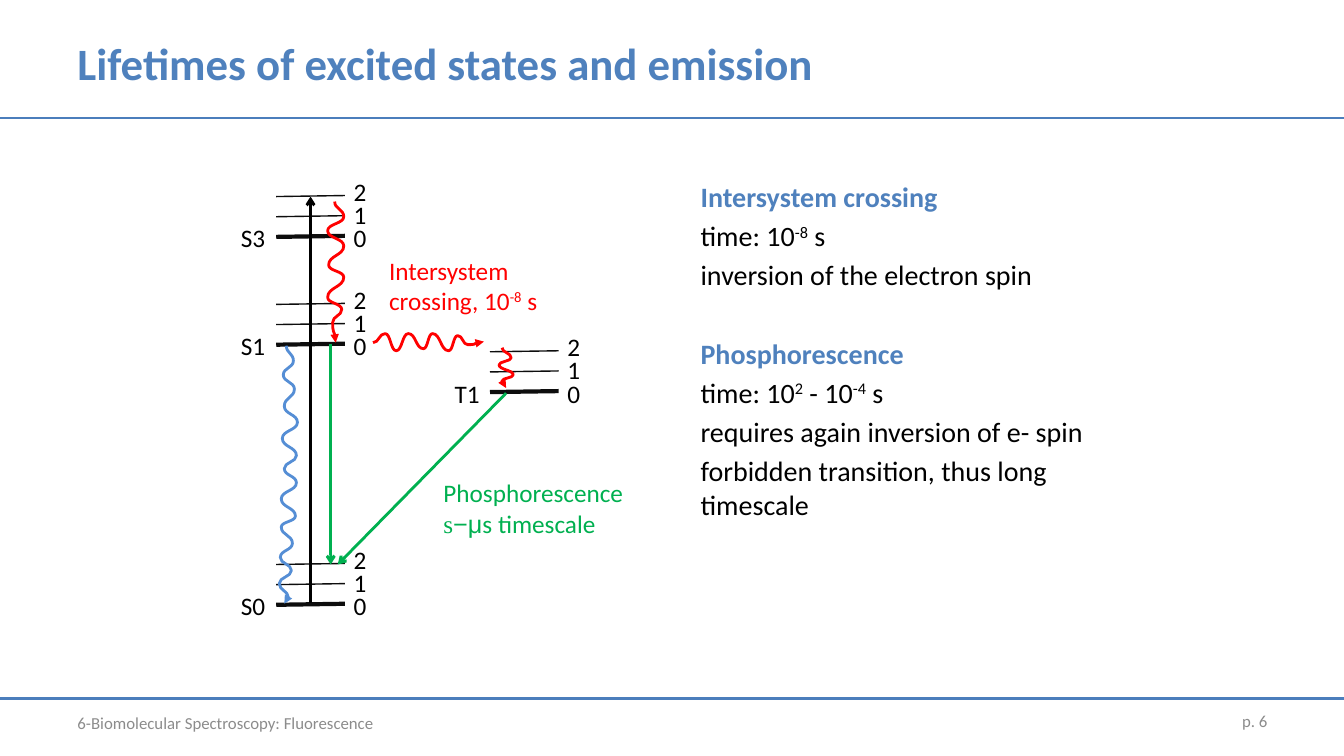
"""Build a slide on excited-state lifetimes with an energy-level diagram."""
from lxml import etree
from pptx import Presentation
from pptx import util as u
from pptx.dml.color import RGBColor
from pptx.enum import shapes, text
from pptx.oxml.ns import qn

TITLE_BLUE = RGBColor(0x4F, 0x81, 0xBD)
RULE_BLUE = RGBColor(0x4B, 0x7E, 0xBC)
WAVE_BLUE = RGBColor(0x55, 0x8E, 0xD5)
GREY = RGBColor(0x8C, 0x8C, 0x8C)
BLACK = RGBColor(0, 0, 0)
LEVEL_BLACK = RGBColor(0x0D, 0x0D, 0x0D)
RED = RGBColor(0xFF, 0, 0)
GREEN = RGBColor(0, 0xB0, 0x50)

SLIDE_WIDTH, SLIDE_HEIGHT = 13.33, 7.5
RULES = [6.93, 1.17]
TITLE = "Lifetimes of excited states and emission"
FOOTER = "6-Biomolecular Spectroscopy: Fluorescence"
PAGE = "p. 6"

# Each paragraph is a list of runs; a caret marks a superscript run.
PROCESSES = [
    ("Intersystem crossing", [
        ["time: 10", "^-8", " s"],
        ["inversion of the electron spin"]]),
    ("Phosphorescence", [
        ["time: 10", "^2", " - 10", "^-4", " s"],
        ["requires again inversion of e- spin"],
        ["forbidden transition, thus long timescale"]]),
]
CROSSING_LABEL = [["Intersystem crossing, 10", "^-8", " s"]]
PHOSPHORESCENCE_LABEL = [["Phosphorescence"], ["s", "−μ", "s timescale"]]
LABEL_FONTS = {"s": "Times New Roman", "−μ": "Arial"}

STATES = [("S0", 2.74, 6.0), ("S1", 2.74, 3.42), ("T1", 4.86, 3.89), ("S3", 2.74, 2.35)]
LEVEL_WIDTH, LEVEL_GAP, LEVEL_TILT = 0.68, 0.2, 0.01
NUMBER_RISE = 0.23

TRANSITIONS = [
    ((3.08, 5.98), (3.08, 1.95), BLACK),
    ((3.28, 3.41), (3.28, 5.6), GREEN),
    ((5.02, 3.9), (3.35, 5.6), GREEN),
]
RELAXATIONS = [
    (RED, True, [(3.32, 2), (3.41, 2.15), (3.25, 2.29), (3.41, 2.44), (3.26, 2.63),
                 (3.41, 2.75), (3.25, 2.95), (3.39, 3.07), (3.3, 3.2), (3.33, 3.4)]),
    (WAVE_BLUE, True, [(2.84, 3.43), (2.91, 3.58), (2.81, 3.72), (2.92, 3.86), (2.82, 4.03),
                       (2.95, 4.19), (2.8, 4.35), (2.94, 4.52), (2.82, 4.65), (2.94, 4.79),
                       (2.79, 4.95), (2.93, 5.12), (2.79, 5.23), (2.9, 5.39), (2.78, 5.53),
                       (2.89, 5.66), (2.77, 5.79), (2.86, 5.93), (2.82, 5.99)]),
    (RED, False, [(3.7, 3.4), (3.82, 3.31), (3.93, 3.48), (4.05, 3.31), (4.2, 3.46),
                  (4.29, 3.31), (4.45, 3.48), (4.54, 3.33), (4.64, 3.42), (4.8, 3.39)]),
    (RED, True, [(4.98, 3.45), (5.07, 3.55), (4.95, 3.62), (5.09, 3.72), (4.98, 3.78),
                 (5.02, 3.85)]),
]


def style_line(shape, color, width, head=None):
    shape.line.color.rgb = color
    shape.line.width = u.Pt(width)
    if head:
        outline = shape.line._get_or_add_ln()
        etree.SubElement(outline, qn("a:tailEnd"), type=head)


def add_line(slide, start, end, color, width, head=None):
    line = slide.shapes.add_connector(
        shapes.MSO_CONNECTOR.STRAIGHT, *(u.Inches(v) for v in (*start, *end)))
    style_line(line, color, width, head)
    etree.SubElement(line._element.spPr, qn("a:effectLst"))


def add_wave(slide, color, vertical, turns):
    """Join the turning points by curves that run along the wave's direction."""
    builder = slide.shapes.build_freeform(*turns[0], scale=u.Inches(1) / 1.0)
    builder = slide.shapes.build_freeform(
        *(u.Inches(v) for v in turns[0]))
    builder.add_line_segments([(u.Inches(x), u.Inches(y)) for x, y in turns[1:]], close=False)
    wave = builder.convert_to_shape()
    wave.shadow.inherit = False
    wave.fill.background()
    style_line(wave, color, 2, "triangle")
    steps = list(wave._element.iter(qn("a:moveTo"), qn("a:lnTo")))
    ends = [(int(step[0].get("x")), int(step[0].get("y"))) for step in steps]
    for step, (x0, y0), (x1, y1) in zip(steps[1:], ends, ends[1:]):
        xm, ym = (x0 + x1) // 2, (y0 + y1) // 2
        controls = [(x0, ym), (x1, ym)] if vertical else [(xm, y0), (xm, y1)]
        curve = etree.Element(qn("a:cubicBezTo"))
        for x, y in controls + [(x1, y1)]:
            etree.SubElement(curve, qn("a:pt"), x=str(x), y=str(y))
        step.getparent().replace(step, curve)


def add_runs(paragraph, runs, size, color, bold=False, fonts={}):
    for words in runs:
        run = paragraph.add_run()
        run.text = words.lstrip("^")
        run.font.size = u.Pt(size)
        run.font.name = fonts.get(words, "Calibri")
        run.font.color.rgb = color
        run.font.bold = bold
        if words.startswith("^"):
            run._r.get_or_add_rPr().set("baseline", "30000")


def add_text(slide, box, paragraphs, size, color, bold=False, wrap=True,
             anchor=text.MSO_ANCHOR.TOP, align=text.PP_ALIGN.LEFT, fonts={}):
    frame = slide.shapes.add_textbox(*(u.Inches(v) for v in box)).text_frame
    frame.word_wrap = wrap
    frame.vertical_anchor = anchor
    for i, runs in enumerate(paragraphs):
        paragraph = frame.add_paragraph() if i else frame.paragraphs[0]
        paragraph.alignment = align
        add_runs(paragraph, runs, size, color, bold, fonts)
    return frame


def add_processes(slide):
    frame = add_text(slide, (6.85, 1.73, 4.32, 4.63), [], 20, BLACK)
    for i, (heading, facts) in enumerate(PROCESSES):
        paragraph = frame.add_paragraph() if i else frame.paragraphs[0]
        paragraph.space_before = u.Pt(32 if i else 0)
        add_runs(paragraph, [heading], 20, TITLE_BLUE, True)
        for fact in facts:
            paragraph = frame.add_paragraph()
            paragraph.space_before = u.Pt(4)
            add_runs(paragraph, fact, 20, BLACK)


def add_state(slide, name, left, ground):
    right = left + LEVEL_WIDTH
    add_text(slide, (left - 0.45, ground - 0.19, 0.45, 0.4), [[name]], 18, BLACK, wrap=False)
    for number in range(3):
        y = ground - number * LEVEL_GAP
        add_line(slide, (left, y), (right, y - LEVEL_TILT), LEVEL_BLACK, 1 if number else 3)
        add_text(slide, (right - 0.01, ground - 0.19 - number * NUMBER_RISE, 0.33, 0.4),
                 [[str(number)]], 18, BLACK, wrap=False)


def main():
    deck = Presentation()
    deck.slide_width, deck.slide_height = u.Inches(SLIDE_WIDTH), u.Inches(SLIDE_HEIGHT)
    slide = deck.slides.add_slide(deck.slide_layouts[6])
    middle = text.MSO_ANCHOR.MIDDLE
    for y in RULES:
        add_line(slide, (0, y), (SLIDE_WIDTH, y), RULE_BLUE, 1.5)
    add_text(slide, (0.67, 0, 12, 1.25), [[TITLE]], 32, TITLE_BLUE, True, anchor=middle)
    add_processes(slide)
    add_text(slide, (0.67, 6.97, 4.22, 0.4), [[FOOTER]], 12, GREY, anchor=middle)
    add_text(slide, (9.56, 6.95, 3.11, 0.4), [[PAGE]], 12, GREY, anchor=middle,
             align=text.PP_ALIGN.RIGHT)
    for state in STATES:
        add_state(slide, *state)
    for start, end, color in TRANSITIONS:
        add_line(slide, start, end, color, 2, "arrow")
    for relaxation in RELAXATIONS:
        add_wave(slide, *relaxation)
    add_text(slide, (3.76, 2.48, 1.82, 0.71), CROSSING_LABEL, 18, RED)
    add_text(slide, (4.3, 4.69, 2.26, 0.71), PHOSPHORESCENCE_LABEL, 18, GREEN,
             fonts=LABEL_FONTS)
    deck.save("out.pptx")


if __name__ == "__main__":
    main()
